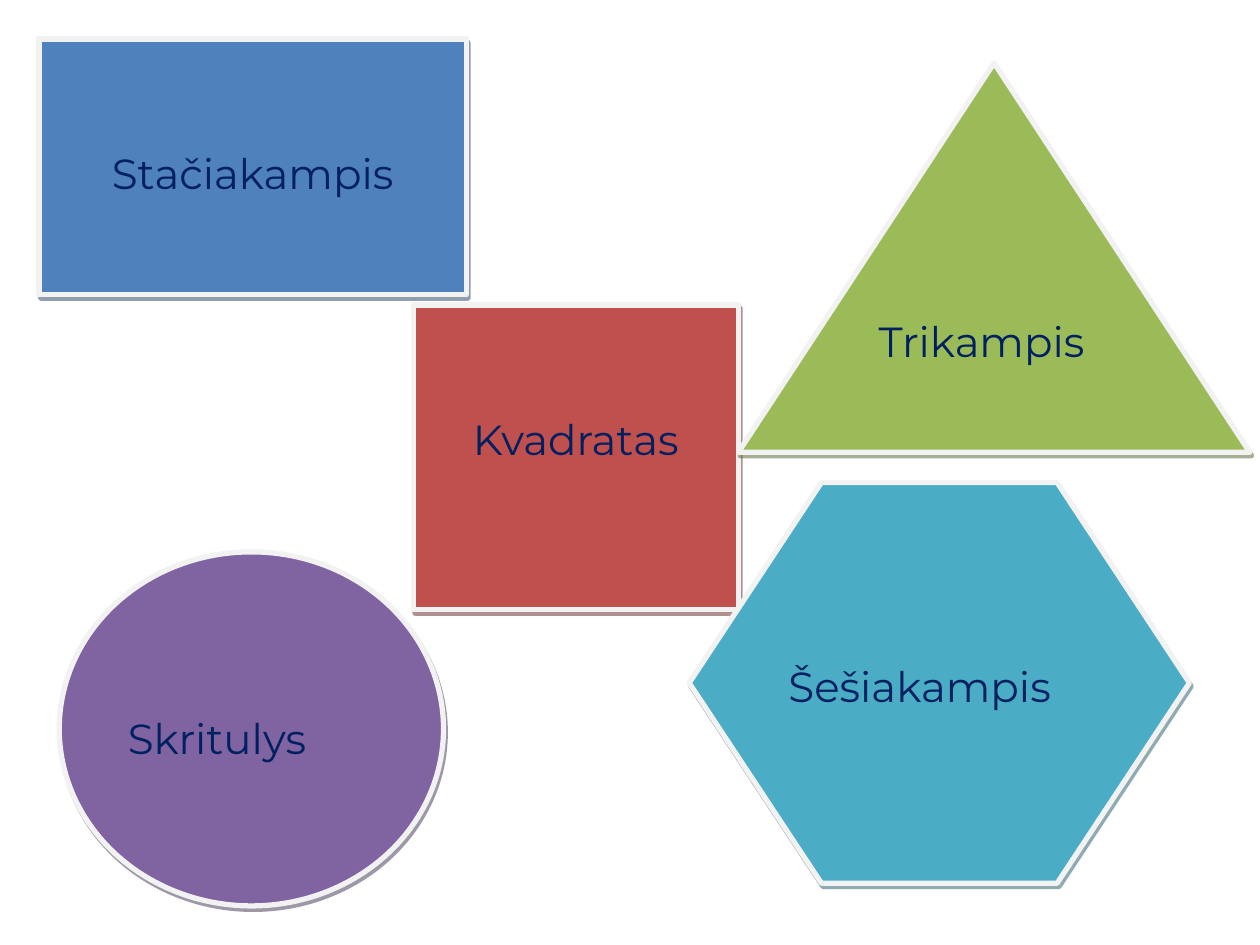
from lxml.etree import SubElement
from pptx import Presentation
from pptx.dml.color import RGBColor
from pptx.enum.shapes import MSO_SHAPE as Shape
from pptx.enum.text import MSO_ANCHOR as Anchor, PP_ALIGN as Align
from pptx.oxml.ns import qn
from pptx.util import Inches, Pt

NAVY = RGBColor(0x00, 0x20, 0x60)
PALE = RGBColor(0xF2, 0xF2, 0xF2)
BLUE = RGBColor(0x4F, 0x81, 0xBD)
BLUE_SHADE = RGBColor(0x24, 0x3F, 0x60)
RED = RGBColor(0xC0, 0x50, 0x4D)
RED_SHADE = RGBColor(0x62, 0x24, 0x23)
PURPLE = RGBColor(0x80, 0x64, 0xA2)
PURPLE_SHADE = RGBColor(0x3F, 0x31, 0x51)
TEAL = RGBColor(0x4B, 0xAC, 0xC6)
TEAL_SHADE = RGBColor(0x20, 0x58, 0x67)
GREEN = RGBColor(0x9B, 0xBB, 0x59)
GREEN_SHADE = RGBColor(0x4E, 0x61, 0x28)


class FigureSlide:
    font = "Montserrat"
    size = Pt(24)
    outline = Pt(3)
    shadow_distance = Pt(2.2)
    shadow_degrees = 63

    def __init__(self, slide):
        self.slide = slide

    def figure(self, kind, label, box, fill, shade, align=Align.LEFT, drop=0.86):
        figure = self.slide.shapes.add_shape(kind, *map(Inches, box))
        figure.fill.solid()
        figure.fill.fore_color.rgb = fill
        figure.line.color.rgb = PALE
        figure.line.width = self.outline
        self.cast_shadow(figure, shade)
        self.add_label(figure.text_frame, label, align, drop)
        return figure

    def cast_shadow(self, figure, shade):
        figure.shadow.inherit = False
        effects = figure._element.spPr.find(qn("a:effectLst"))
        shadow = SubElement(
            effects,
            qn("a:outerShdw"),
            dist=str(int(self.shadow_distance)),
            dir=str(self.shadow_degrees * 60000),
            algn="ctr",
            rotWithShape="0",
        )
        color = SubElement(shadow, qn("a:srgbClr"), val=str(shade))
        SubElement(color, qn("a:alpha"), val="50000")

    def add_label(self, frame, label, align, drop):
        frame.text = label
        frame.word_wrap = True
        frame.vertical_anchor = Anchor.TOP
        frame.margin_top = Inches(drop)
        paragraph = frame.paragraphs[0]
        paragraph.alignment = align
        font = paragraph.runs[0].font
        font.name = self.font
        font.size = self.size
        font.color.rgb = NAVY


def main():
    deck = Presentation()
    deck.slide_width, deck.slide_height = Inches(10), Inches(7.5)
    page = FigureSlide(deck.slides.add_slide(deck.slide_layouts[6]))

    page.figure(Shape.RECTANGLE, "Stačiakampis", (0.31, 0.31, 3.39, 2.03),
                BLUE, BLUE_SHADE, Align.CENTER)
    page.figure(Shape.RECTANGLE, "Kvadratas", (3.28, 2.42, 2.58, 2.42),
                RED, RED_SHADE, Align.CENTER)
    page.figure(Shape.OVAL, "Skritulys", (0.47, 4.38, 3.05, 2.81),
                PURPLE, PURPLE_SHADE)
    hexagon = page.figure(Shape.HEXAGON, "Šešiakampis", (5.47, 3.83, 3.97, 3.18),
                          TEAL, TEAL_SHADE)
    hexagon.adjustments[0] = 0.33
    page.figure(Shape.ISOSCELES_TRIANGLE, "Trikampis", (5.86, 0.5, 4.06, 3.09),
                GREEN, GREEN_SHADE, drop=0.46)

    deck.save("out.pptx")


if __name__ == "__main__":
    main()
